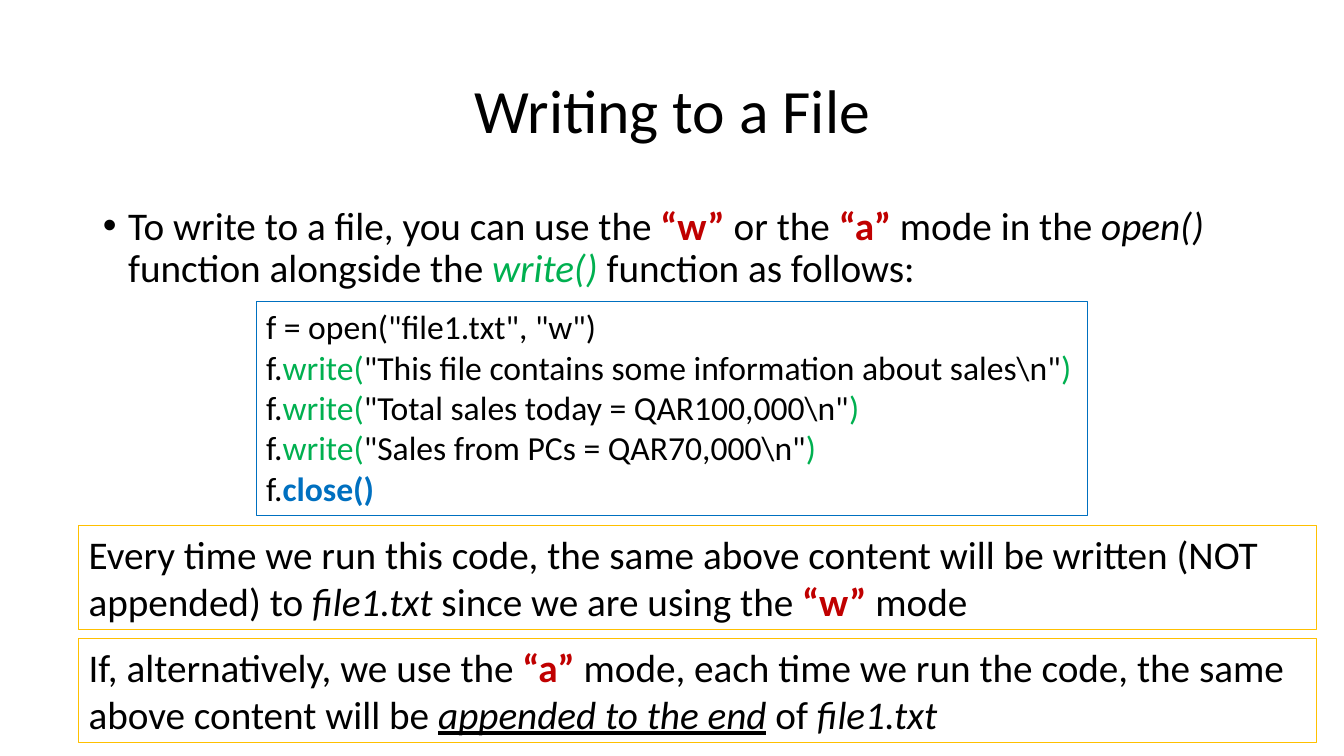
from dataclasses import dataclass
from pptx import Presentation
from pptx.dml.color import RGBColor
from pptx.enum.text import MSO_ANCHOR, MSO_AUTO_SIZE, PP_ALIGN
from pptx.util import Emu, Pt
from lxml.etree import SubElement
from pptx.oxml.ns import qn

PX = 9144
FONT = "Calibri"
BLACK = RGBColor(0x00, 0x00, 0x00)
RED = RGBColor(0xC0, 0x00, 0x00)
GREEN = RGBColor(0x00, 0xB0, 0x50)
BLUE = RGBColor(0x00, 0x70, 0xC0)
GOLD = RGBColor(0xFF, 0xC0, 0x00)


@dataclass(frozen=True)
class Piece:
    text: str
    color: RGBColor = BLACK
    bold: bool = False
    italic: bool = False
    under: bool = False


Line = list[Piece]


@dataclass(frozen=True)
class Box:
    left: int
    top: int
    width: int
    height: int
    color: RGBColor
    size: int
    wrap: bool
    lines: list[Line]


def px(count: int) -> Emu:
    return Emu(count * PX)


def place(shape, left: int, top: int, width: int, height: int) -> None:
    shape.left, shape.top = px(left), px(top)
    shape.width, shape.height = px(width), px(height)


def style(run, piece: Piece, size: int) -> None:
    font = run.font
    font.name, font.size = FONT, Pt(size)
    font.color.rgb = piece.color
    font.bold, font.italic, font.underline = piece.bold, piece.italic, piece.under


def write(para, line: Line, size: int) -> None:
    for piece in line:
        for row, text in enumerate(piece.text.split("\n")):
            if row:
                para.add_line_break()
            if text:
                run = para.add_run()
                run.text = text
                style(run, piece, size)


def draw(slide, box: Box) -> None:
    shape = slide.shapes.add_textbox(
        px(box.left), px(box.top), px(box.width), px(box.height)
    )
    shape.line.color.rgb = box.color
    shape.line.width = Pt(0.75)
    frame = shape.text_frame
    frame.word_wrap = box.wrap
    frame.auto_size = MSO_AUTO_SIZE.SHAPE_TO_FIT_TEXT
    for row, line in enumerate(box.lines):
        para = frame.add_paragraph() if row else frame.paragraphs[0]
        write(para, line, box.size)


def head(shape, text: str) -> None:
    place(shape, 92, 40, 1150, 145)
    frame = shape.text_frame
    frame.text = text
    frame.vertical_anchor = MSO_ANCHOR.MIDDLE
    para = frame.paragraphs[0]
    para.alignment = PP_ALIGN.CENTER
    para.line_spacing = 0.9
    style(para.runs[0], Piece(text), 44)


def point(shape, line: Line) -> None:
    place(shape, 92, 200, 1150, 476)
    frame = shape.text_frame
    frame.auto_size = MSO_AUTO_SIZE.NONE
    para = frame.paragraphs[0]
    write(para, line, 28)
    para.line_spacing = 0.9
    para.space_before = Pt(10)
    props = para._p.get_or_add_pPr()
    props.set("marL", str(px(25)))
    props.set("indent", str(px(-25)))
    SubElement(props, qn("a:buFont")).set("typeface", "Arial")
    SubElement(props, qn("a:buChar")).set("char", "•")


def call(text: str) -> Line:
    return [Piece("f."), Piece("write(", GREEN), Piece(f'"{text}\\n"'), Piece(")", GREEN)]


INTRO = [
    Piece("To write to a file, you can use the "),
    Piece("“w”", RED, bold=True),
    Piece(" or the "),
    Piece("“a”", RED, bold=True),
    Piece(" mode in the "),
    Piece("open() ", italic=True),
    Piece("function alongside the "),
    Piece("write()", GREEN, italic=True),
    Piece(" function as follows:"),
]
CODE = [
    [Piece('f = open("file1.txt", "w")')],
    call("This file contains some information about sales"),
    call("Total sales today = QAR100,000"),
    call("Sales from PCs = QAR70,000"),
    [Piece("f."), Piece("close()", BLUE, bold=True)],
]
RENEW = [
    Piece("Every time we run this code, the same above content will be written (NOT \nappended) to "),
    Piece("file1.txt", italic=True),
    Piece(" since we are using the "),
    Piece("“w” ", RED, bold=True),
    Piece("mode"),
]
APPEND = [
    Piece("If, alternatively, we use the "),
    Piece("“a”", RED, bold=True),
    Piece(" mode, each time we run the code, the same \nabove content will be "),
    Piece("appended to the end", italic=True, under=True),
    Piece(" of "),
    Piece("file1.txt", italic=True),
]
BOXES = [
    Box(254, 299, 825, 212, BLUE, 24, False, CODE),
    Box(78, 521, 1228, 104, GOLD, 28, True, [RENEW]),
    Box(78, 633, 1228, 104, GOLD, 28, False, [APPEND]),
]


def main() -> None:
    deck = Presentation()
    deck.slide_width, deck.slide_height = px(1333), px(750)
    slide = deck.slides.add_slide(deck.slide_layouts[1])
    head(slide.shapes.title, "Writing to a File")
    point(slide.placeholders[1], INTRO)
    for box in BOXES:
        draw(slide, box)
    deck.save("out.pptx")


if __name__ == "__main__":
    main()
